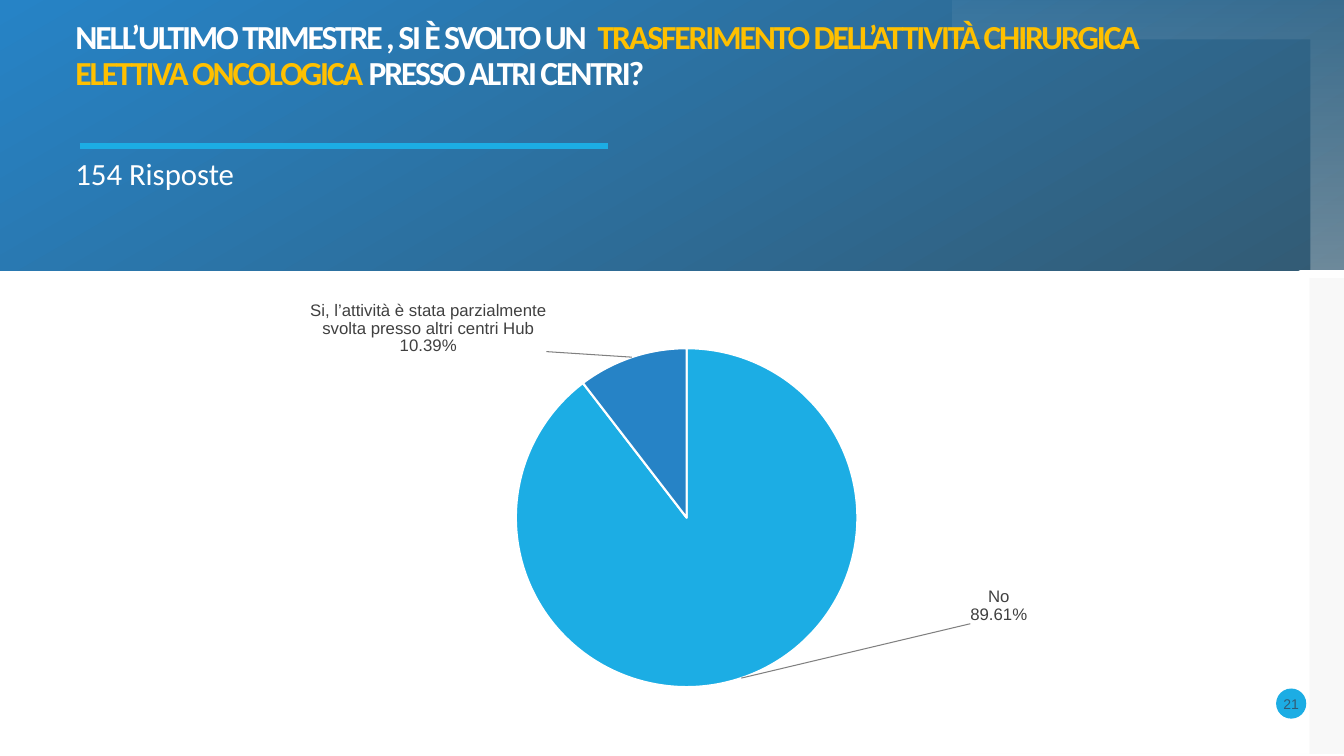
from copy import deepcopy
from dataclasses import dataclass

from lxml.etree import SubElement
from pptx import Presentation
from pptx.chart.data import CategoryChartData
from pptx.dml.color import RGBColor
from pptx.enum.chart import XL_CHART_TYPE, XL_LABEL_POSITION
from pptx.enum.shapes import MSO_CONNECTOR, MSO_SHAPE
from pptx.enum.text import MSO_ANCHOR, MSO_AUTO_SIZE, PP_ALIGN
from pptx.oxml import parse_xml
from pptx.oxml.ns import nsdecls, qn
from pptx.util import Cm, Pt


@dataclass(frozen=True)
class Theme:
    white: RGBColor = RGBColor(0xFF, 0xFF, 0xFF)
    gold: RGBColor = RGBColor(0xFF, 0xC0, 0x00)
    cyan: RGBColor = RGBColor(0x1C, 0xAD, 0xE4)
    blue: RGBColor = RGBColor(0x26, 0x83, 0xC6)
    slate: RGBColor = RGBColor(0x33, 0x5B, 0x74)
    grey: RGBColor = RGBColor(0x80, 0x80, 0x80)
    label: RGBColor = RGBColor(0x40, 0x40, 0x40)
    heading_font: str = "Calibri"
    chart_font: str = "Arial"
    title_size: Pt = Pt(24)
    answers_size: Pt = Pt(22)
    label_size: Pt = Pt(12)
    number_size: Pt = Pt(10)


theme = Theme()


def set_font(font, name, size, color, bold=False):
    font.name, font.size, font.bold = name, size, bold
    font.color.rgb = color


def finish(shape, *opacities):
    """Remove line and shadow, and give each fill colour its opacity in percent."""
    shape.line.fill.background()
    shape.shadow.inherit = False
    for color, opacity in zip(shape._element.spPr.iter(qn("a:srgbClr")), opacities):
        SubElement(color, qn("a:alpha"), val=str(opacity * 1000))


prs = Presentation()
prs.slide_width, prs.slide_height = Cm(33.87), Cm(19.05)
slide = prs.slides.add_slide(prs.slide_layouts[2])
shapes = slide.shapes

# Header band and the two corner frames
band_height = 6.81
lower_corner = [(33.38, band_height), (33.87, band_height), (33.87, 19.05),
                (23.88, 19.05), (23.88, 18.54), (33.38, 18.54)]
upper_corner = [(23.88, 0), (33.87, 0), (33.87, band_height),
                (33.38, band_height), (33.38, 0.51), (23.88, 0.51)]

builder = shapes.build_freeform(*lower_corner[0], scale=Cm(1))
builder.add_line_segments(lower_corner[1:])
lower_frame = builder.convert_to_shape()
lower_frame.fill.solid()
lower_frame.fill.fore_color.rgb = theme.grey
finish(lower_frame, 5)

band = shapes.add_shape(MSO_SHAPE.RECTANGLE, 0, 0, prs.slide_width, Cm(band_height))
builder = shapes.build_freeform(*upper_corner[0], scale=Cm(1))
builder.add_line_segments(upper_corner[1:])
upper_frame = builder.convert_to_shape()
for part, angle, colors, opacities in (
    (band, 120, (theme.slate, theme.blue), ()),
    (upper_frame, 270, (theme.white, theme.white), (5, 30)),
):
    part.fill.gradient()
    part.fill.gradient_angle = angle
    for stop, color in zip(part.fill.gradient_stops, colors):
        stop.color.rgb = color
    finish(part, *opacities)

# Question and number of answers
question, answers = shapes.title, slide.placeholders[1]
for holder, top, width, height in ((question, 0.51, 29.64, 3.05), (answers, 3.91, 21, 1)):
    holder._element.getparent().append(holder._element)  # in front of the band
    holder.left, holder.top, holder.width, holder.height = Cm(1.9), Cm(top), Cm(width), Cm(height)
    frame = holder.text_frame
    frame.margin_left = frame.margin_right = frame.margin_top = frame.margin_bottom = 0
    frame.vertical_anchor = MSO_ANCHOR.TOP
    frame.auto_size = MSO_AUTO_SIZE.NONE
    frame.word_wrap = True
    frame.paragraphs[0].space_before = Pt(0)

wording = question.text_frame.paragraphs[0]
wording.line_spacing = 0.9
for text, color in (
    ("NELL’ULTIMO TRIMESTRE , SI È SVOLTO UN  ", theme.white),
    ("TRASFERIMENTO DELL’ATTIVITÀ CHIRURGICA ELETTIVA ONCOLOGICA ", theme.gold),
    ("PRESSO ALTRI CENTRI?", theme.white),
):
    run = wording.add_run()
    run.text = text
    set_font(run.font, theme.heading_font, theme.title_size, color, bold=True)
    run.font._element.set("spc", "-150")

answers.text_frame.text = "154 Risposte"
answer_count = answers.text_frame.paragraphs[0]
answer_count.space_after = Pt(10)
set_font(answer_count.runs[0].font, theme.heading_font, theme.answers_size, theme.white)

rule = shapes.add_connector(MSO_CONNECTOR.STRAIGHT, Cm(2.01), Cm(3.68), Cm(15.32), Cm(3.68))
rule.line.color.rgb = theme.cyan
rule.line.width = Pt(4.32)
SubElement(rule._element.spPr, qn("a:effectLst"))

# Page number
page = shapes.add_shape(MSO_SHAPE.OVAL, Cm(32.16), Cm(17.35), Cm(0.76), Cm(0.76))
page.fill.solid()
page.fill.fore_color.rgb = theme.cyan
finish(page)
frame = page.text_frame
frame.margin_left = frame.margin_right = frame.margin_top = frame.margin_bottom = 0
frame.vertical_anchor = MSO_ANCHOR.MIDDLE
frame.word_wrap = False
frame.text = "21"
frame.paragraphs[0].alignment = PP_ALIGN.CENTER
set_font(frame.paragraphs[0].runs[0].font, theme.chart_font, theme.number_size, theme.slate)

# Pie of the answers
data = CategoryChartData()
data.categories = ["No", "Si, l’attività è stata parzialmente svolta presso altri centri Hub"]
data.add_series("Series 1", (89.61, 10.39))
chart = shapes.add_chart(XL_CHART_TYPE.PIE, Cm(2.41), Cm(7.52), Cm(30.12), Cm(11.02), data).chart
chart.has_legend = chart.has_title = False
chart.font.name, chart.font.size = theme.chart_font, theme.number_size
chart.plots[0].vary_by_categories = True

plot_area = chart._chartSpace.chart.plotArea
for layout in plot_area.findall(qn("c:layout")):
    plot_area.remove(layout)
plot_area.insert(0, parse_xml(
    f'<c:layout {nsdecls("c")}><c:manualLayout><c:layoutTarget val="inner"/>'
    '<c:xMode val="edge"/><c:yMode val="edge"/><c:x val="0.241"/><c:y val="0.107"/>'
    '<c:w val="0.507"/><c:h val="0.781"/></c:manualLayout></c:layout>'))

series = chart.plots[0].series[0]
for index, color in enumerate((theme.cyan, theme.blue)):
    slice_format = series.points[index].format
    slice_format.fill.solid()
    slice_format.fill.fore_color.rgb = color
    slice_format.line.color.rgb = theme.white
    slice_format.line.width = Pt(1.5)

labels = series.data_labels
labels.show_value = False
labels.show_category_name = labels.show_percentage = True
labels.number_format, labels.number_format_is_linked = "0.00%", False
labels.position = XL_LABEL_POSITION.OUTSIDE_END
set_font(labels.font, theme.chart_font, theme.label_size, theme.label)

# Each label repeats the shared settings and adds its own offset
label_xml = labels._element
for leader in label_xml.findall(qn("c:showLeaderLines")):
    label_xml.remove(leader)
SubElement(label_xml, qn("c:separator")).text = "\n"
shared = list(label_xml)
for index, (x, y) in enumerate(((0.19, -0.22), (-0.07, 0))):
    label = parse_xml(
        f'<c:dLbl {nsdecls("c")}><c:idx val="{index}"/><c:layout><c:manualLayout>'
        f'<c:x val="{x}"/><c:y val="{y}"/></c:manualLayout></c:layout></c:dLbl>')
    label.extend([deepcopy(setting) for setting in shared])
    label_xml.insert(index, label)
SubElement(label_xml, qn("c:showLeaderLines"), val="1")
label_xml.append(parse_xml(
    f'<c:leaderLines {nsdecls("c", "a")}><c:spPr><a:ln w="9525"><a:solidFill>'
    f'<a:srgbClr val="{theme.grey}"/></a:solidFill></a:ln></c:spPr></c:leaderLines>'))

prs.save("out.pptx")
